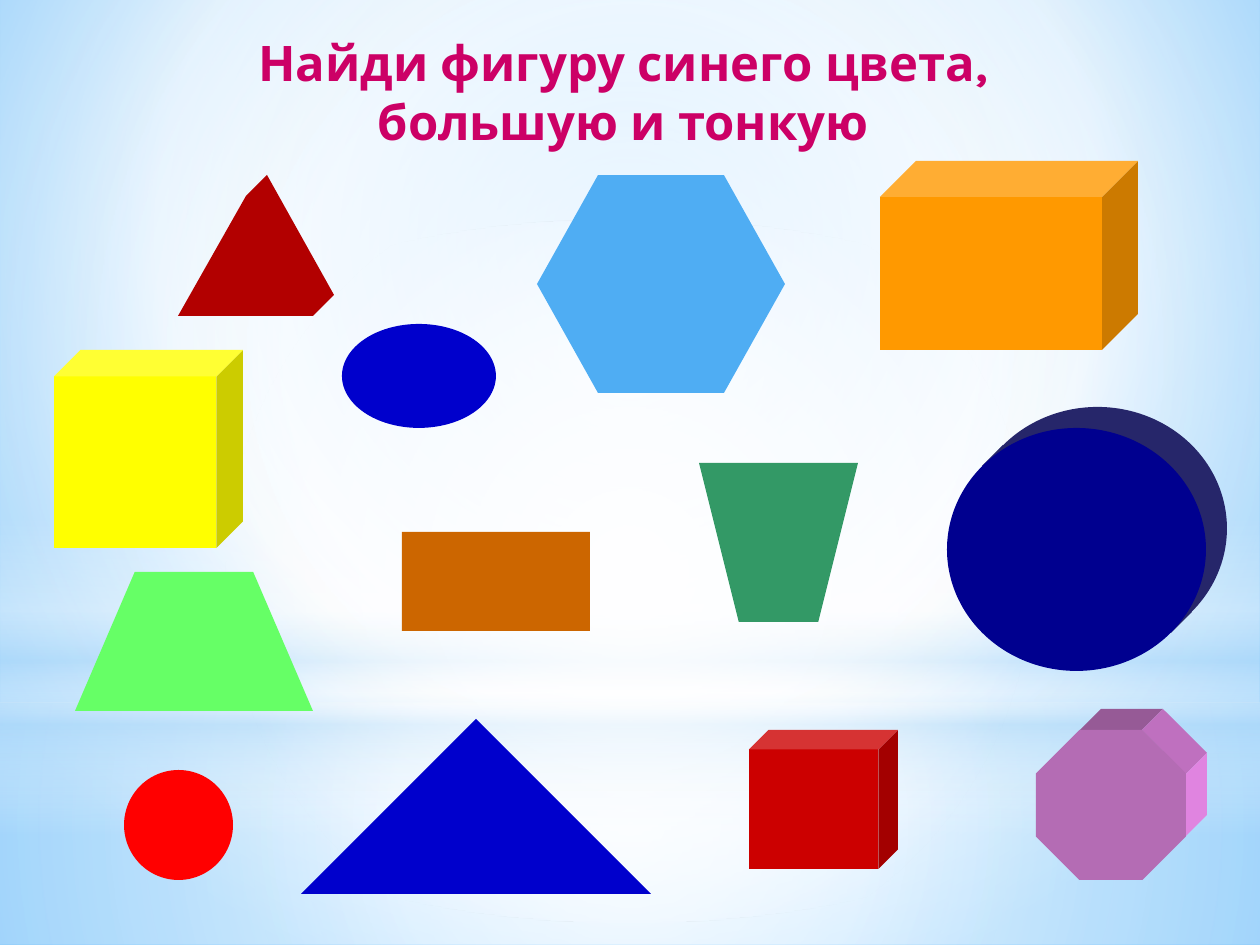
from itertools import pairwise

from lxml.etree import SubElement
from pptx import Presentation
from pptx.dml.color import RGBColor
from pptx.enum.shapes import MSO_SHAPE as S
from pptx.enum.text import MSO_AUTO_SIZE, MSO_ANCHOR, PP_ALIGN
from pptx.oxml.ns import qn
from pptx.util import Pt

PX = 914400 // 126
WIDE, HIGH = 1260, 945

THEME = {
    "font": "Karla", "size": 28, "title": "CC0066",
    "white": "FFFFFF", "mist": "B4DCFA", "sky": "9ED5FF", "deep": "5BB9FF",
    "red": "FF0000", "wine": "B20000", "ruby": "CC0000", "blue": "0000CC",
    "navy": "00008F", "night": "26266A", "azure": "4FADF3",
    "orange": "FF9900", "yellow": "FFFF00", "brown": "CC6600",
    "lime": "66FF66", "green": "339966",
    "mauve": "B46CB4", "plum": "965A96", "orchid": "BF70BF", "pink": "E084E0",
}

TITLE = "Найди фигуру синего цвета, большую и тонкую"
TITLE_BOX = (134, 26, 978, 131)

# Gradient stops: position %, colour, opacity %
MID = (50, 50, 50, 50)
BACK = ([(0, "sky", 100), (60, "white", 100), (100, "deep", 100)], (20, 10, 20, 60))
# Preset, box, stops, focus (None: top to bottom)
GLOWS = [
    (S.RECTANGLE, (0, 703, 1260, 242),
     [(0, "white", 91), (37, "white", 76), (100, "mist", 79)], MID),
    (S.RECTANGLE, (0, 0, 1260, 703),
     [(0, "white", 89), (48, "white", 62), (100, "mist", 79)], MID),
    (S.RECTANGLE, (0, 519, 1260, 315),
     [(0, "white", 0), (29, "white", 30), (45, "mist", 40),
      (55, "white", 26), (65, "mist", 60), (100, "white", 0)], None),
    (S.OVAL, (0, 220, 1260, 703), [(0, "white", 100), (56, "white", 0)], MID),
]

# Depth of solids: front edge points, colour of each side face
DEPTH = (21, -21)
SIDES = [
    ([(1080, 730), (1142, 730), (1186, 774), (1186, 836)], ["plum", "orchid", "pink"]),
    ([(982, 466), (1171, 633)], ["night"]),
]
PRISM = [(178, 316), (246, 196), (267, 175), (334, 295), (313, 316)]

# Preset, box, colour, adjustment, turn
FIGURES = [
    (S.OVAL, (124, 770, 109, 110), "red", None, 0),
    (S.OCTAGON, (1036, 730, 150, 150), "mauve", 0.29, 0),
    (S.TRAPEZOID, (75, 572, 238, 139), "lime", 0.43, 0),
    (S.ISOSCELES_TRIANGLE, (301, 719, 350, 175), "blue", 0.5, 0),
    (S.OVAL, (342, 324, 154, 104), "blue", None, 0),
    (S.CUBE, (880, 161, 258, 189), "orange", 0.19, 0),
    (S.HEXAGON, (537, 175, 248, 218), "azure", 0.28, 0),
    (S.TRAPEZOID, (699, 463, 159, 159), "green", 0.25, 180),
    (S.RECTANGLE, (402, 532, 188, 99), "brown", None, 0),
    (S.CUBE, (54, 350, 189, 198), "yellow", 0.14, 0),
    (S.CUBE, (749, 730, 149, 139), "ruby", 0.14, 0),
    (S.OVAL, (968, 407, 259, 243), "night", None, 0),
    (S.OVAL, (947, 428, 259, 243), "navy", None, 0),
]


def emu(box):
    return [v * PX for v in box]


def paint(shape, colour):
    shape.shadow.inherit = False
    shape.fill.solid()
    shape.fill.fore_color.rgb = RGBColor.from_string(THEME[colour])
    shape.line.fill.background()
    return shape


def blend(root, stops, focus):
    """Turn the first solid fill under root into a gradient."""
    solid = root.find(".//" + qn("a:solidFill"))
    grad = solid.makeelement(qn("a:gradFill"), rotWithShape="1")
    rows = SubElement(grad, qn("a:gsLst"))
    for pos, colour, alpha in stops:
        stop = SubElement(rows, qn("a:gs"), pos=str(pos * 1000))
        tint = SubElement(stop, qn("a:srgbClr"), val=THEME[colour])
        if alpha < 100:
            SubElement(tint, qn("a:alpha"), val=str(alpha * 1000))
    if focus:
        way = SubElement(grad, qn("a:path"), path="circle")
        SubElement(way, qn("a:fillToRect"),
                   {side: str(v * 1000) for side, v in zip("ltrb", focus)})
    else:
        SubElement(grad, qn("a:lin"), ang="5400000", scaled="0")
    solid.getparent().replace(solid, grad)


def outline(shapes, points, colour):
    pen = shapes.build_freeform(*points[0], scale=PX)
    pen.add_line_segments(points[1:], close=True)
    return paint(pen.convert_to_shape(), colour)


def figure(shapes, kind, box, colour, adjust=None, turn=0):
    shape = paint(shapes.add_shape(kind, *emu(box)), colour)
    if adjust is not None:
        shape.adjustments[0] = adjust
    shape.rotation = turn
    return shape


def heading(shapes):
    title = shapes.title
    title.left, title.top, title.width, title.height = emu(TITLE_BOX)
    frame = title.text_frame
    frame.text = TITLE
    frame.word_wrap = True
    frame.auto_size = MSO_AUTO_SIZE.NONE
    frame.vertical_anchor = MSO_ANCHOR.TOP
    para = frame.paragraphs[0]
    para.alignment = PP_ALIGN.CENTER
    para.font.name, para.font.size = THEME["font"], Pt(THEME["size"])
    para.font.bold = True
    para.font.color.rgb = RGBColor.from_string(THEME["title"])
    shapes._spTree.append(title._element)  # bring to front


def main():
    deck = Presentation()
    deck.slide_width, deck.slide_height = emu((WIDE, HIGH))
    slide = deck.slides.add_slide(deck.slide_layouts[5])
    shapes = slide.shapes

    back = slide.background.fill
    back.solid()
    back.fore_color.rgb = RGBColor.from_string(THEME["white"])
    blend(slide._element, *BACK)
    for kind, box, stops, focus in GLOWS:
        blend(figure(shapes, kind, box, "white")._element, stops, focus)

    dx, dy = DEPTH
    for edge, colours in SIDES:
        for ((ax, ay), (bx, by)), colour in zip(pairwise(edge), colours):
            outline(shapes, [(ax, ay), (bx, by), (bx + dx, by + dy),
                             (ax + dx, ay + dy)], colour)
    outline(shapes, PRISM, "wine")
    for item in FIGURES:
        figure(shapes, *item)
    heading(shapes)
    deck.save("out.pptx")


if __name__ == "__main__":
    main()
